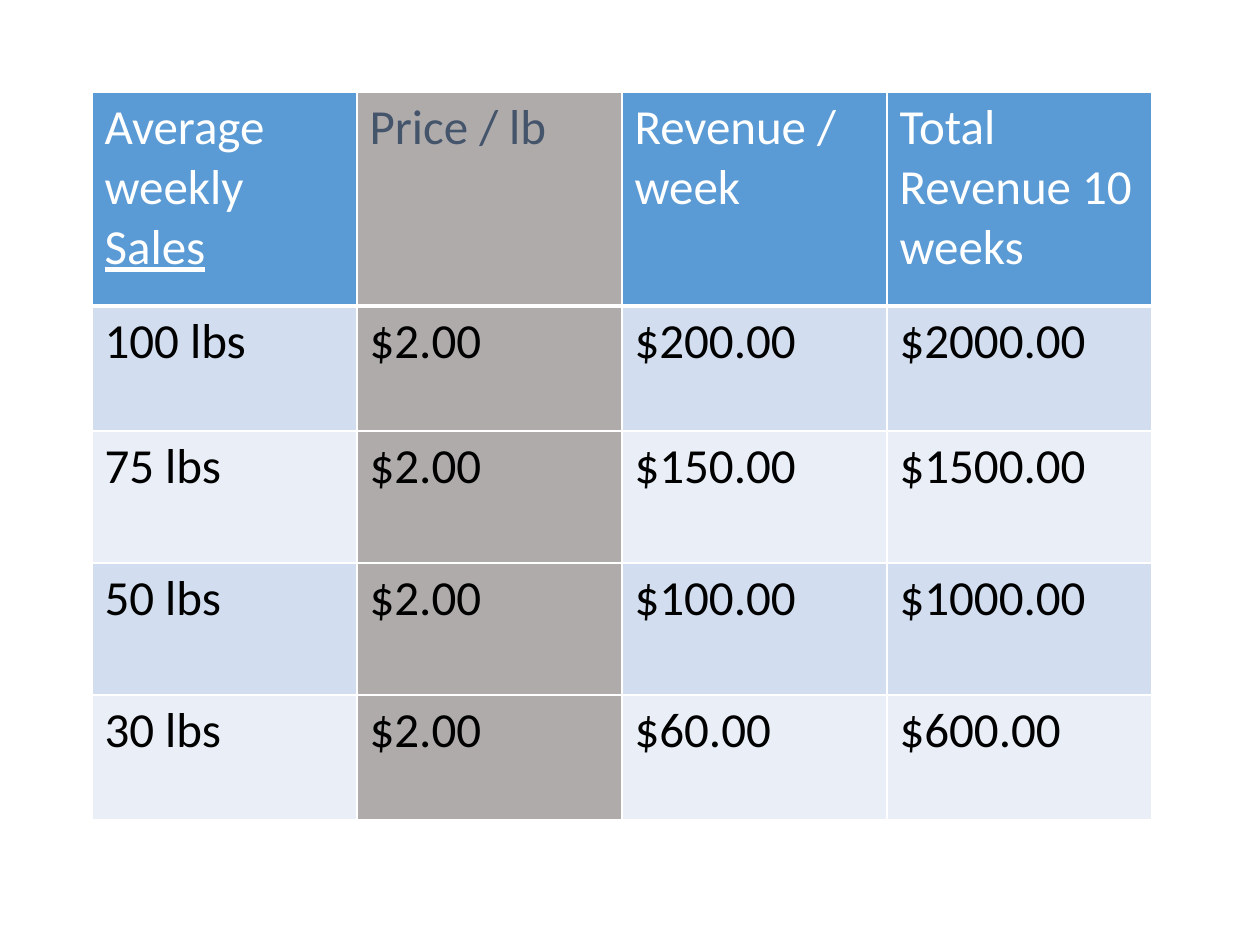
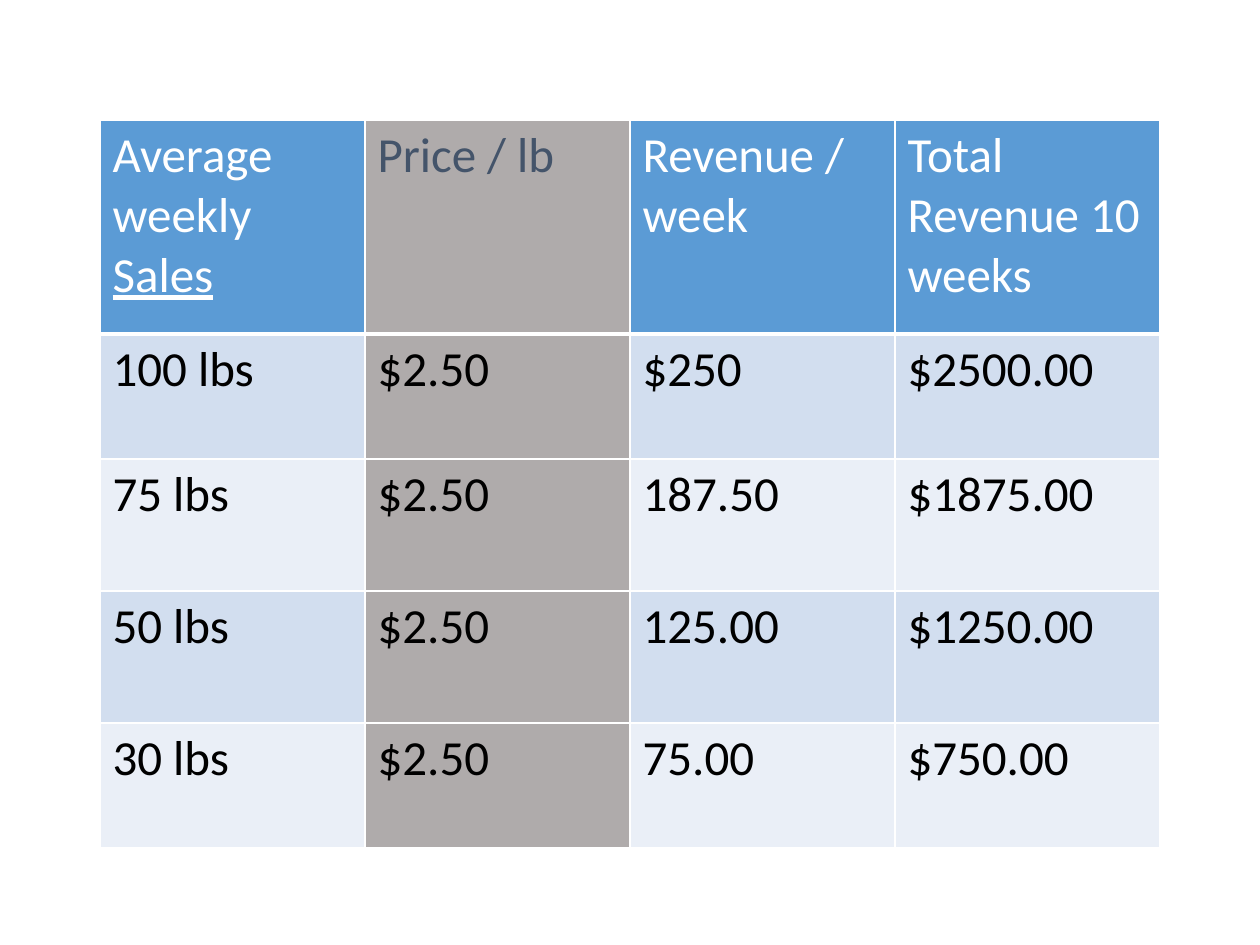
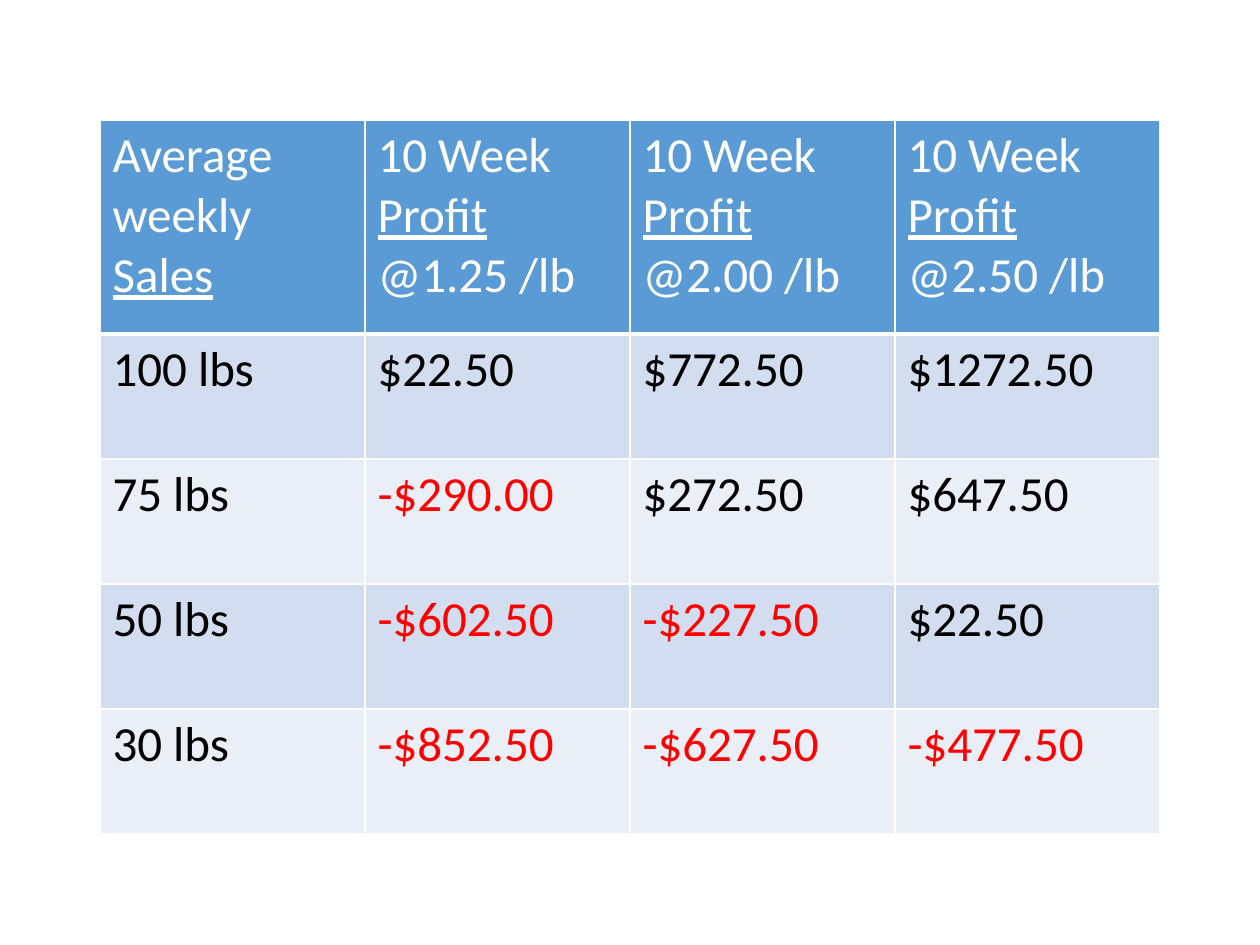
from lxml import etree
from pptx import Presentation, util as u
from pptx.dml.color import RGBColor
from pptx.oxml.ns import qn

PX = u.Inches(1) / 126
FONT, FONT_SIZE = "Calibri", 28
WHITE, BLACK, LOSS_RED, SLATE = "FFFFFF", "000000", "FF0000", "44546A"
HEADER_BLUE, PRICE_GREY = "5B9BD5", "AFABAB"
BANDS = ("D2DEEF", "EAEFF7")

COLUMN_WIDTH = 265
HEADER_HEIGHT = 214
REVENUE_ROWS = (125, 132, 132, 125)
PROFIT_ROWS = (125,) * 4

SALES_HEADING = "Average weekly _Sales_"
REVENUE_HEADINGS = (SALES_HEADING, "Price / lb", "Revenue / week",
                    "Total Revenue 10 weeks")
PROFIT_HEADINGS = (SALES_HEADING, "10 Week _Profit _@1.25 /lb",
                   "10 Week _Profit _@2.00 /lb", "10 Week _Profit_ @2.50 /lb")
WEEKLY_SALES = ("100 lbs", "75 lbs", "50 lbs", "30 lbs")


def px(length):
    return u.Emu(round(length * PX))


def rgb(color):
    return RGBColor.from_string(color)


def set_borders(cell, bottom_width):
    """Draw white lines round a cell; the fill must be set afterwards."""
    properties = cell._tc.get_or_add_tcPr()
    for side, width in (("L", 1), ("R", 1), ("T", 1), ("B", bottom_width)):
        line = etree.SubElement(properties, qn(f"a:ln{side}"), w=str(u.Pt(width)))
        fill = etree.SubElement(line, qn("a:solidFill"))
        etree.SubElement(fill, qn("a:srgbClr"), val=WHITE)


def fill_cell(cell, wording, fill, color, bottom_width=1):
    """Write a cell; wording between underscores is underlined."""
    set_borders(cell, bottom_width)
    cell.fill.solid()
    cell.fill.fore_color.rgb = rgb(fill)
    paragraph = cell.text_frame.paragraphs[0]
    paragraph.font.name = FONT
    paragraph.font.size = u.Pt(FONT_SIZE)
    paragraph.font.color.rgb = rgb(color)
    for i, part in enumerate(wording.split("_")):
        if part:
            run = paragraph.add_run()
            run.text = part
            if i % 2:
                run.font.underline = True


def add_sales_table(slide, left, top, headings, amounts, row_heights, price_column=None):
    """Add a table of weekly sales; price_column is the one shown in grey."""
    heights = (HEADER_HEIGHT, *row_heights)
    table = slide.shapes.add_table(
        len(heights), len(headings), px(left), px(top),
        px(COLUMN_WIDTH * len(headings)), px(sum(heights))).table
    table.first_row = table.horz_banding = False
    for row, height in zip(table.rows, heights):
        row.height = px(height)

    # Header row
    for col, heading in enumerate(headings):
        table.columns[col].width = px(COLUMN_WIDTH)
        is_price = col == price_column
        fill_cell(table.cell(0, col), heading,
                  PRICE_GREY if is_price else HEADER_BLUE,
                  SLATE if is_price else WHITE, bottom_width=3)

    # Banded rows, with losses in red
    for row, (sales, row_amounts) in enumerate(zip(WEEKLY_SALES, amounts), start=1):
        band = BANDS[(row - 1) % 2]
        for col, wording in enumerate((sales, *row_amounts)):
            fill_cell(table.cell(row, col), wording,
                      PRICE_GREY if col == price_column else band,
                      LOSS_RED if wording.startswith("-") else BLACK)


def add_revenue_table(slide, left, top, price, revenues):
    amounts = [(price, weekly, total) for weekly, total in revenues]
    add_sales_table(slide, left, top, REVENUE_HEADINGS, amounts,
                    REVENUE_ROWS, price_column=1)


def main():
    prs = Presentation()
    prs.slide_width, prs.slide_height = u.Inches(10), u.Inches(7.5)
    blank = prs.slide_layouts[6]

    # Revenue at $2.00
    add_revenue_table(prs.slides.add_slide(blank), 92, 92, "$2.00", (
        ("$200.00", "$2000.00"),
        ("$150.00", "$1500.00"),
        ("$100.00", "$1000.00"),
        ("$60.00", "$600.00")))

    # Revenue at $2.50
    add_revenue_table(prs.slides.add_slide(blank), 100, 120, "$2.50", (
        ("$250", "$2500.00"),
        ("187.50", "$1875.00"),
        ("125.00", "$1250.00"),
        ("75.00", "$750.00")))

    # Profit at each price
    add_sales_table(prs.slides.add_slide(blank), 100, 120, PROFIT_HEADINGS, (
        ("$22.50", "$772.50", "$1272.50"),
        ("-$290.00", "$272.50", "$647.50"),
        ("-$602.50", "-$227.50", "$22.50"),
        ("-$852.50", "-$627.50", "-$477.50")), PROFIT_ROWS)

    prs.save("out.pptx")


if __name__ == "__main__":
    main()
